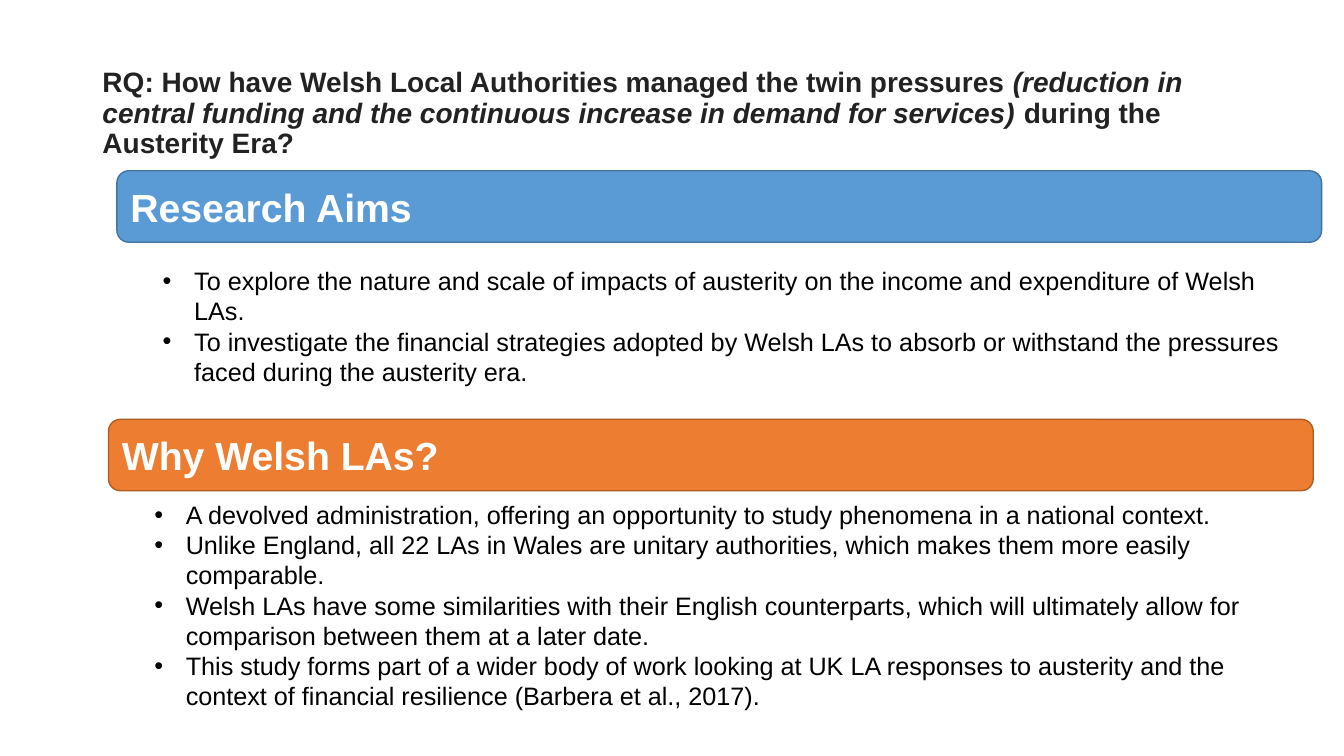
from dataclasses import dataclass

from pptx import Presentation
from pptx.dml.color import RGBColor
from pptx.enum.shapes import MSO_SHAPE
from pptx.enum.text import MSO_ANCHOR, MSO_AUTO_SIZE, PP_ALIGN
from pptx.util import Pt

ROUNDED = MSO_SHAPE.ROUNDED_RECTANGLE
MIDDLE, TOP = MSO_ANCHOR.MIDDLE, MSO_ANCHOR.TOP
LEFT = PP_ALIGN.LEFT
NO_AUTOFIT = MSO_AUTO_SIZE.NONE
TWO_CONTENT_LAYOUT = 3


@dataclass(frozen=True)
class Theme:
    font: str = "Arial"
    title_size: int = 20
    heading_size: int = 28
    body_size: int = 18
    title: str = "222222"
    body: str = "000000"
    heading: str = "FFFFFF"
    blue: str = "5B9BD5"
    blue_edge: str = "43739E"
    orange: str = "ED7D31"
    orange_edge: str = "AF5C24"


THEME = Theme()
BAR_HEIGHT = 51
LIST_INDENT = 22.5

QUESTION = [
    ("RQ: How have Welsh Local Authorities managed the twin pressures", False),
    (" (reduction in central funding and the continuous increase in demand for services)", True),
    (" during the Austerity Era?", False),
]
AIMS = [
    "To explore the nature and scale of impacts of austerity on the income and expenditure of Welsh LAs.",
    "To investigate the financial strategies adopted by Welsh LAs to absorb or withstand "
    "the pressures faced during the austerity era.",
]
REASONS = [
    "A devolved administration, offering an opportunity to study phenomena in a national context.",
    "Unlike England, all 22 LAs in Wales are unitary authorities, which makes them more easily comparable.",
    "Welsh LAs have some similarities with their English counterparts, which will ultimately allow "
    "for comparison between them at a later date.",
    "This study forms part of a wider body of work looking at UK LA responses to austerity and "
    "the context of financial resilience (Barbera et al., 2017).",
]


def place(shape, left, top, width, height):
    shape.left, shape.top = Pt(left), Pt(top)
    shape.width, shape.height = Pt(width), Pt(height)


def prepare_frame(shape, anchor):
    frame = shape.text_frame
    frame.word_wrap = True
    frame.auto_size = NO_AUTOFIT
    frame.vertical_anchor = anchor
    return frame


def style(para, size, color, bold=False):
    para.alignment = LEFT
    para.font.name = THEME.font
    para.font.size = Pt(size)
    para.font.bold = bold
    para.font.color.rgb = RGBColor.from_string(color)


def add_question(title, box):
    place(title, *box)
    para = prepare_frame(title, MIDDLE).paragraphs[0]
    style(para, THEME.title_size, THEME.title, bold=True)
    para.line_spacing = 0.9
    for text, italic in QUESTION:
        span = para.add_run()
        span.text = text
        span.font.italic = italic


def add_heading_bar(page, box, text, fill, edge):
    bar = page.shapes.add_shape(ROUNDED, *map(Pt, box))
    bar.shadow.inherit = False
    bar.fill.solid()
    bar.fill.fore_color.rgb = RGBColor.from_string(fill)
    bar.line.color.rgb = RGBColor.from_string(edge)
    bar.line.width = Pt(1)
    para = prepare_frame(bar, MIDDLE).paragraphs[0]
    para.text = text
    style(para, THEME.heading_size, THEME.heading, bold=True)


def fill_list(body, box, items):
    place(body, *box)
    frame = prepare_frame(body, TOP)
    frame.text = "\n".join(items)
    for para in frame.paragraphs:
        style(para, THEME.body_size, THEME.body)
        para.space_before = Pt(0)
        # Hanging indent for the template's bullet
        properties = para._p.get_or_add_pPr()
        properties.set("marL", str(Pt(LIST_INDENT)))
        properties.set("indent", str(-Pt(LIST_INDENT)))


def add_section(page, body, box, list_top, heading, items, fill, edge):
    """Heading bar across the top of the box, with the list below it."""
    left, top, width, height = box
    add_heading_bar(page, (left, top, width, BAR_HEIGHT), heading, fill, edge)
    list_box = (left + 25.5, top + list_top, width - 25.5, height - list_top)
    fill_list(body, list_box, items)


def build_research_page(deck):
    page = deck.slides.add_slide(deck.slide_layouts[TWO_CONTENT_LAYOUT])
    title, aims, reasons = list(page.placeholders)[:3]

    # Research question
    add_question(title, (66, 56, 828, 51))

    # Aims and reasons
    add_section(page, aims, (83.5, 122, 860.5, 160), 64,
                "Research Aims", AIMS, THEME.blue, THEME.blue_edge)
    add_section(page, reasons, (77.5, 299.5, 860.5, 213), 53.5,
                "Why Welsh LAs?", REASONS, THEME.orange, THEME.orange_edge)


def main():
    deck = Presentation()
    deck.slide_width, deck.slide_height = Pt(960), Pt(540)
    build_research_page(deck)
    deck.save("out.pptx")


if __name__ == "__main__":
    main()
